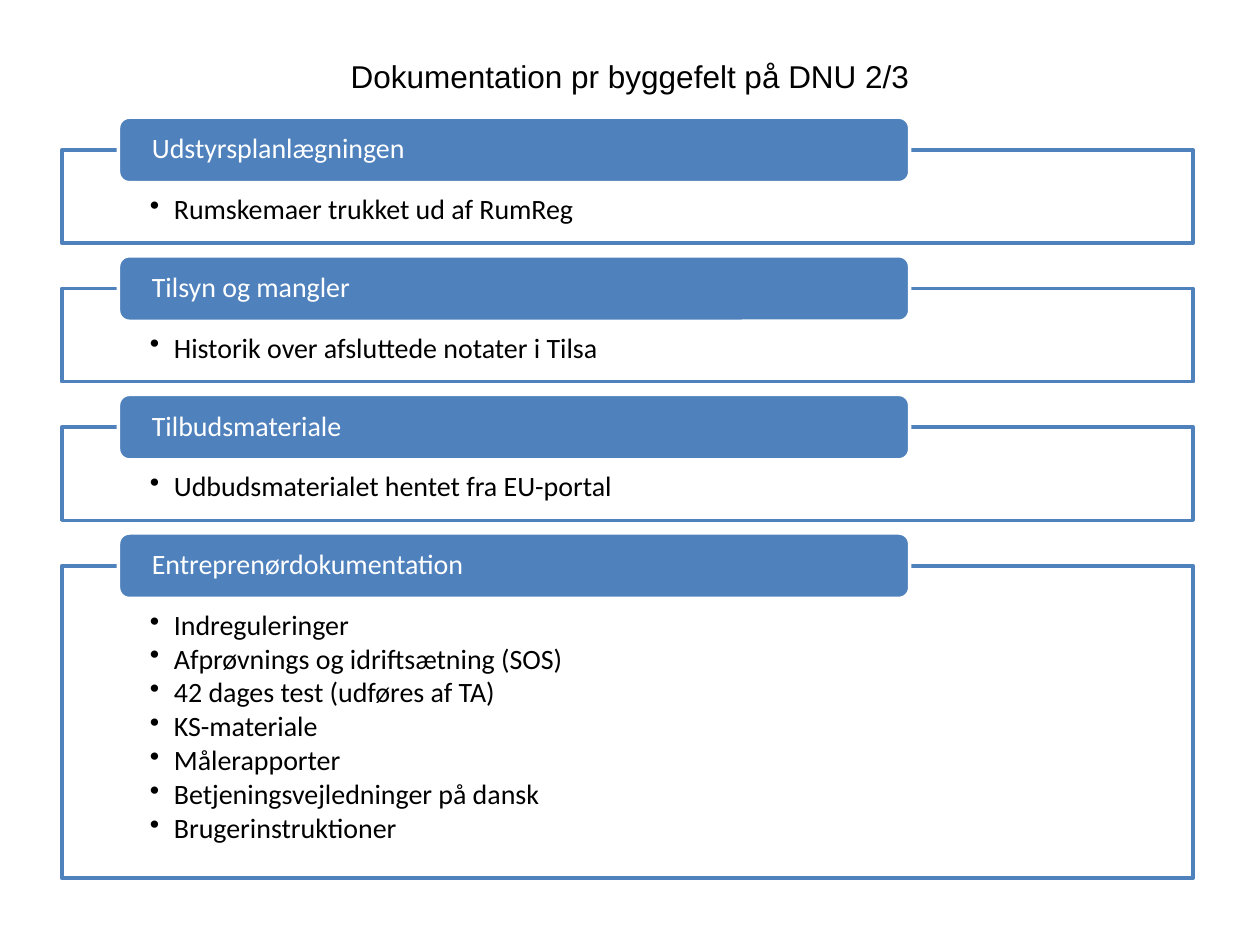
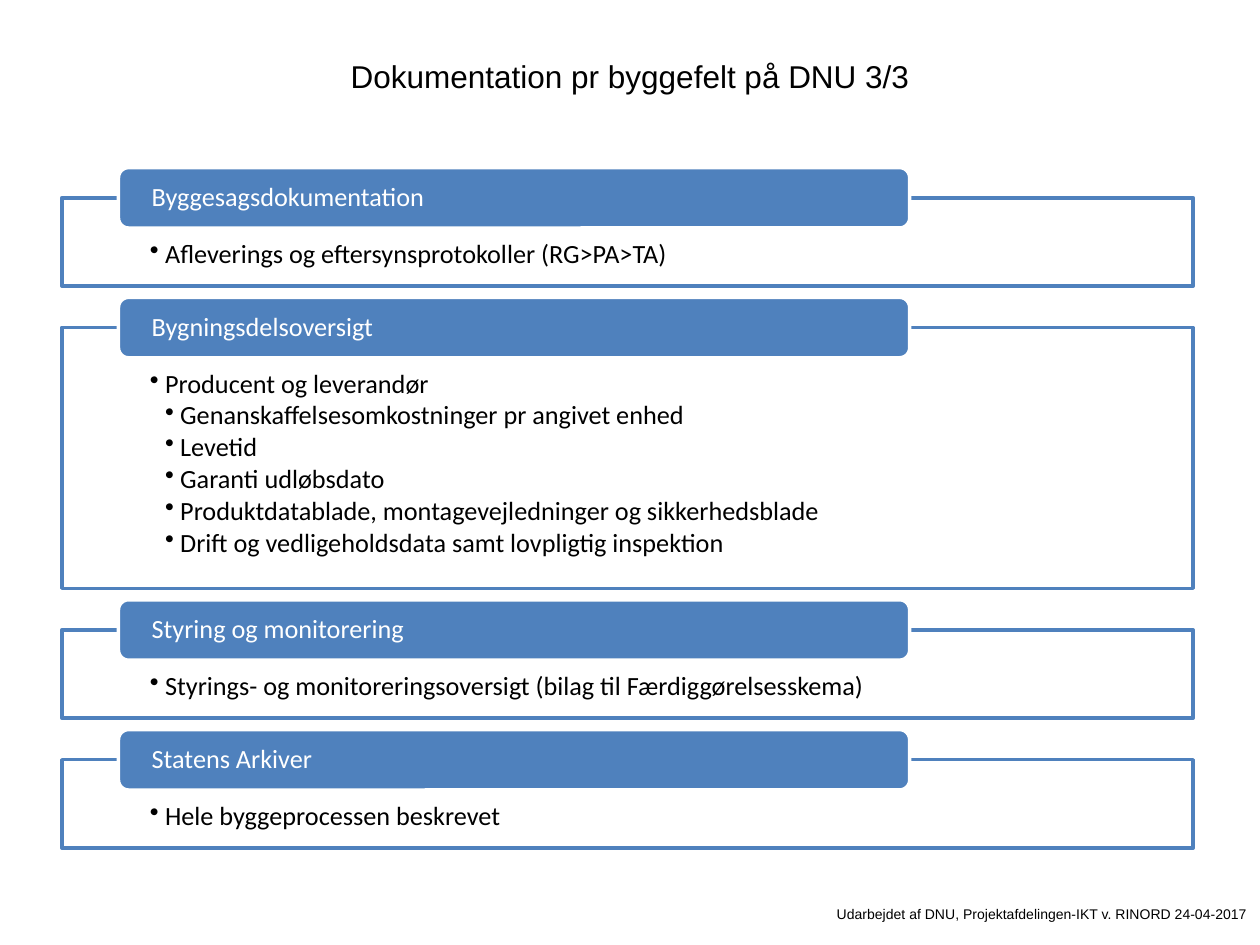
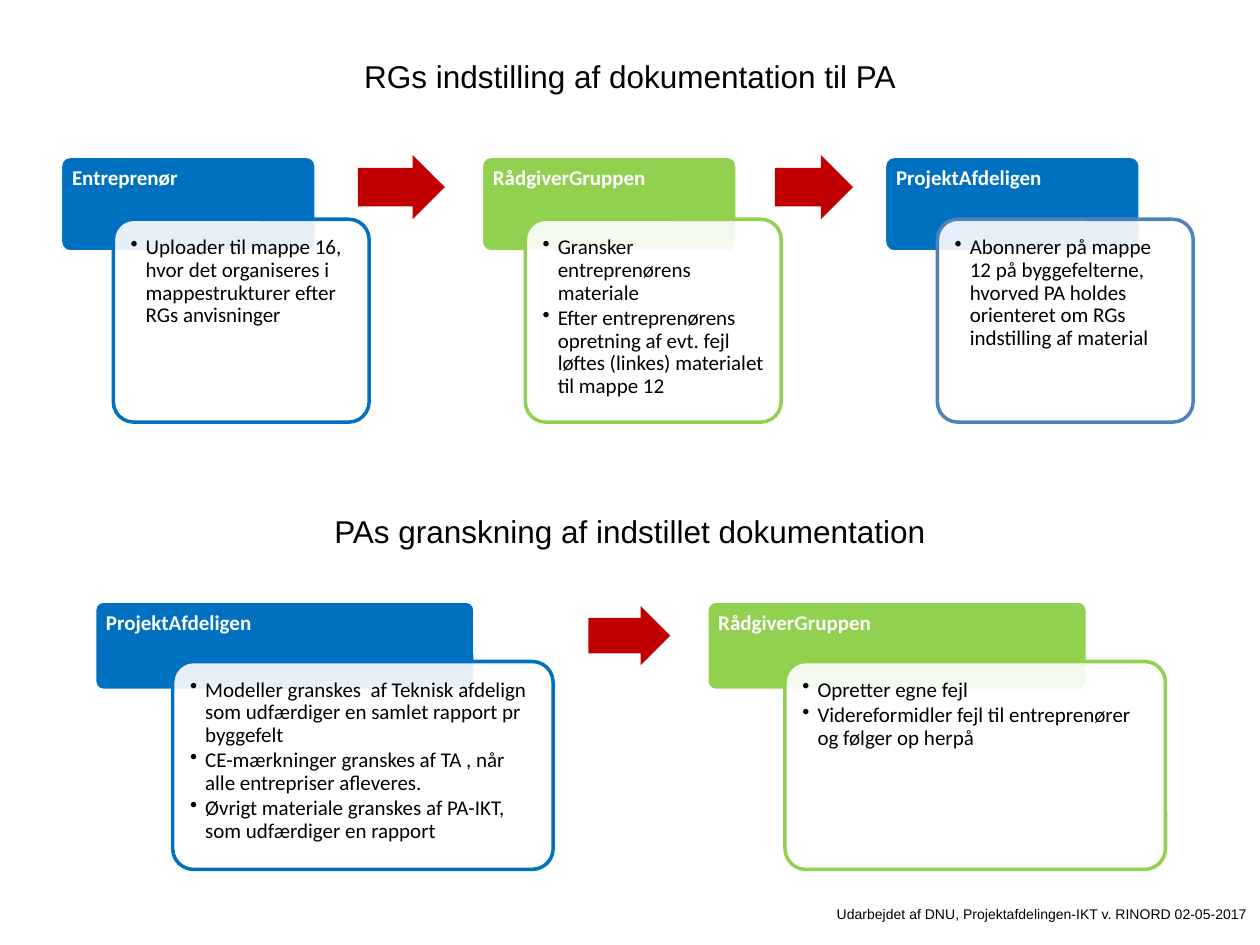
from dataclasses import dataclass

from lxml import etree
from pptx import Presentation
from pptx.dml.color import RGBColor
from pptx.enum.shapes import MSO_SHAPE
from pptx.enum.text import MSO_ANCHOR, MSO_AUTO_SIZE, PP_ALIGN
from pptx.oxml.ns import qn
from pptx.util import Pt

PX = 9144
RECT = MSO_SHAPE.RECTANGLE
ROUNDED = MSO_SHAPE.ROUNDED_RECTANGLE
ARROW = MSO_SHAPE.RIGHT_ARROW
TOP = MSO_ANCHOR.TOP
MIDDLE = MSO_ANCHOR.MIDDLE
LEFT = PP_ALIGN.LEFT
CENTER = PP_ALIGN.CENTER
RIGHT = PP_ALIGN.RIGHT
NO_FIT = MSO_AUTO_SIZE.NONE

WHITE = "FFFFFF"
BLACK = "000000"
STEEL = "4F81BD"
BLUE = "0070C0"
GREEN = "92D050"
RED = "C00000"
HEADING_FONT = "Arial"
BODY_FONT = "Calibri"


@dataclass(frozen=True)
class Box:
    left: int
    top: int
    width: int
    height: int

    def emu(self) -> tuple[int, ...]:
        return tuple(v * PX for v in (self.left, self.top, self.width, self.height))


@dataclass(frozen=True)
class Item:
    text: str
    level: int = 0


@dataclass(frozen=True)
class Section:
    heading: str
    frame_height: int
    items: tuple[Item, ...]


@dataclass(frozen=True)
class SectionStyle:
    top: int
    tab_height: int
    gap: int
    text_top: int
    indent: int
    size: int


@dataclass(frozen=True)
class Card:
    heading: str
    fill: str
    outline: str
    left: int
    body_left: int
    items: tuple[Item, ...]


@dataclass(frozen=True)
class CardRow:
    top: int
    width: int
    header_height: int
    body_top: int
    body_height: int
    cards: tuple[Card, ...]
    arrows: tuple[Box, ...]


TITLE_BOX = Box(50, -2, 900, 125)
SUBTITLE_BOX = Box(50, 359, 900, 125)
FOOTER_BOX = Box(390, 714, 610, 36)
FRAME_LEFT, FRAME_WIDTH = 49, 898
TAB_LEFT, TAB_WIDTH = 94, 628

HANDOVER_STYLE = SectionStyle(top=93, tab_height=52, gap=10, text_top=36, indent=19, size=16)
HANDOVER = (
    Section("Udstyrsplanlægningen", 74, (Item("Rumskemaer trukket ud af RumReg"),)),
    Section("Tilsyn og mangler", 74, (Item("Historik over afsluttede notater i Tilsa"),)),
    Section("Tilbudsmateriale", 74, (Item("Udbudsmaterialet hentet fra EU-portal"),)),
    Section("Entreprenørdokumentation", 248, (
        Item("Indreguleringer"),
        Item("Afprøvnings og idriftsætning (SOS)"),
        Item("42 dages test (udføres af TA)"),
        Item("KS-materiale"),
        Item("Målerapporter"),
        Item("Betjeningsvejledninger på dansk"),
        Item("Brugerinstruktioner"),
    )),
)

ARCHIVE_STYLE = SectionStyle(top=133, tab_height=48, gap=9, text_top=34, indent=12, size=15)
ARCHIVE = (
    Section("Byggesagsdokumentation", 70,
            (Item("Afleverings og eftersynsprotokoller (RG>PA>TA)"),)),
    Section("Bygningsdelsoversigt", 207, (
        Item("Producent og leverandør"),
        Item("Genanskaffelsesomkostninger pr angivet enhed", 1),
        Item("Levetid", 1),
        Item("Garanti udløbsdato", 1),
        Item("Produktdatablade, montagevejledninger og sikkerhedsblade", 1),
        Item("Drift og vedligeholdsdata samt lovpligtig inspektion", 1),
    )),
    Section("Styring og monitorering", 70,
            (Item("Styrings- og monitoreringsoversigt (bilag til Færdiggørelsesskema)"),)),
    Section("Statens Arkiver", 70, (Item("Hele byggeprocessen beskrevet"),)),
)

SUBMISSION = CardRow(
    top=124, width=203, header_height=76, body_top=174, body_height=161,
    cards=(
        Card("Entreprenør", BLUE, BLUE, 48, 90, (
            Item("Uploader til mappe 16, hvor det organiseres i "
                 "mappestrukturer efter RGs anvisninger"),
        )),
        Card("RådgiverGruppen", GREEN, GREEN, 382, 417, (
            Item("Gransker entreprenørens materiale"),
            Item("Efter entreprenørens opretning af evt. fejl løftes (linkes) "
                 "materialet til mappe 12"),
        )),
        Card("ProjektAfdeligen", BLUE, STEEL, 702, 744, (
            Item("Abonnerer på mappe 12 på byggefelterne, hvorved PA holdes "
                 "orienteret om RGs indstilling af material"),
        )),
    ),
    arrows=(Box(284, 123, 69, 51), Box(615, 123, 62, 51)),
)

REVIEW = CardRow(
    top=477, width=302, header_height=71, body_top=525, body_height=165,
    cards=(
        Card("ProjektAfdeligen", BLUE, BLUE, 75, 137, (
            Item("Modeller granskes  af Teknisk afdelign som udfærdiger en "
                 "samlet rapport pr byggefelt"),
            Item("CE-mærkninger granskes af TA , når alle entrepriser afleveres."),
            Item("Øvrigt materiale granskes af PA-IKT, som udfærdiger en rapport"),
        )),
        Card("RådgiverGruppen", GREEN, GREEN, 561, 623, (
            Item("Opretter egne fejl"),
            Item("Videreformidler fejl til entreprenører og følger op herpå"),
        )),
    ),
    arrows=(Box(467, 481, 65, 47),),
)


def color(value: str) -> RGBColor:
    return RGBColor.from_string(value)


def style_font(paragraph, font: str, size: int, ink: str, bold: bool = False) -> None:
    for run in paragraph.runs:
        run.font.name = font
        run.font.size = Pt(size)
        run.font.bold = bold
        run.font.color.rgb = color(ink)


def set_frame(frame, insets: tuple[int, int, int, int], anchor) -> None:
    frame.word_wrap = True
    frame.auto_size = NO_FIT
    frame.vertical_anchor = anchor
    left, top, right, bottom = (inset * PX for inset in insets)
    frame.margin_left, frame.margin_top = left, top
    frame.margin_right, frame.margin_bottom = right, bottom


def add_panel(slide, kind, box: Box, fill: str, outline: str | None = None,
              opacity: int = 100, adjustments: tuple[float, ...] = ()):
    panel = slide.shapes.add_shape(kind, *box.emu())
    panel.shadow.inherit = False
    for index, value in enumerate(adjustments):
        panel.adjustments[index] = value
    panel.fill.solid()
    panel.fill.fore_color.rgb = color(fill)
    if opacity < 100:
        tint = panel.fill._xPr.find(".//" + qn("a:srgbClr"))
        etree.SubElement(tint, qn("a:alpha"), val=str(opacity * 1000))
    if outline:
        panel.line.color.rgb = color(outline)
        panel.line.width = Pt(2)
    else:
        panel.line.fill.background()
    return panel


def write_label(panel, text: str, size: int, insets: tuple[int, int, int, int],
                anchor, bold: bool = False) -> None:
    frame = panel.text_frame
    set_frame(frame, insets, anchor)
    frame.text = text
    label = frame.paragraphs[0]
    label.alignment = LEFT
    label.line_spacing = 0.9
    style_font(label, BODY_FONT, size, WHITE, bold)


def write_list(panel, items: tuple[Item, ...], size: int, indent: int,
               insets: tuple[int, int, int, int]) -> None:
    frame = panel.text_frame
    set_frame(frame, insets, TOP)
    frame.text = "\n".join(item.text for item in items)
    for item, paragraph in zip(items, frame.paragraphs):
        properties = paragraph._p.get_or_add_pPr()
        properties.set("marL", str(indent * (item.level + 1) * PX))
        properties.set("indent", str(-indent * PX))
        etree.SubElement(properties, qn("a:buChar"), char="•")
        paragraph.level = item.level
        paragraph.alignment = LEFT
        paragraph.line_spacing = 0.9
        paragraph.space_after = Pt(size * 0.13)
        style_font(paragraph, BODY_FONT, size, BLACK)


def write_line(frame, text: str, size: int, alignment, anchor) -> None:
    set_frame(frame, (10, 5, 10, 5), anchor)
    frame.text = text
    frame.paragraphs[0].alignment = alignment
    style_font(frame.paragraphs[0], HEADING_FONT, size, BLACK)


def add_titled_slide(deck, title: str):
    slide = deck.slides.add_slide(deck.slide_layouts[5])
    heading = slide.shapes.title
    heading.left, heading.top, heading.width, heading.height = TITLE_BOX.emu()
    write_line(heading.text_frame, title, 18, CENTER, MIDDLE)
    return slide


def add_subtitle(slide, text: str) -> None:
    subtitle = slide.shapes.add_textbox(*SUBTITLE_BOX.emu())
    write_line(subtitle.text_frame, text, 18, CENTER, MIDDLE)


def add_footer(slide, date: str) -> None:
    footer = slide.shapes.add_textbox(*FOOTER_BOX.emu())
    credit = f"Udarbejdet af DNU, Projektafdelingen-IKT v. RINORD {date}"
    write_line(footer.text_frame, credit, 8, RIGHT, TOP)


def draw_sections(slide, sections: tuple[Section, ...], style: SectionStyle) -> None:
    tab_top = style.top
    for section in sections:
        frame_top = tab_top + style.tab_height // 2
        frame = add_panel(slide, RECT,
                          Box(FRAME_LEFT, frame_top, FRAME_WIDTH, section.frame_height),
                          WHITE, STEEL, opacity=90)
        write_list(frame, section.items, style.size, style.indent,
                   (70, style.text_top, 70, 12))
        tab = add_panel(slide, ROUNDED,
                        Box(TAB_LEFT, tab_top, TAB_WIDTH, style.tab_height), STEEL, WHITE)
        write_label(tab, section.heading, style.size, (24, 0, 24, 0), MIDDLE)
        tab_top = frame_top + section.frame_height + style.gap


def draw_cards(slide, row: CardRow) -> None:
    for card in row.cards:
        header = add_panel(slide, ROUNDED,
                           Box(card.left, row.top, row.width, row.header_height),
                           card.fill, WHITE, adjustments=(0.1,))
        write_label(header, card.heading, 12, (7, 7, 7, 5), TOP, bold=True)
        body = add_panel(slide, ROUNDED,
                         Box(card.body_left, row.body_top, row.width, row.body_height),
                         WHITE, card.outline, opacity=90, adjustments=(0.1,))
        write_list(body, card.items, 12, 12, (9, 9, 9, 9))
    for arrow in row.arrows:
        add_panel(slide, ARROW, arrow, RED, adjustments=(0.6, 0.5))


def main() -> None:
    deck = Presentation()
    deck.slide_width, deck.slide_height = 1000 * PX, 750 * PX

    handover = add_titled_slide(deck, "Dokumentation pr byggefelt på DNU 2/3")
    draw_sections(handover, HANDOVER, HANDOVER_STYLE)

    archive = add_titled_slide(deck, "Dokumentation pr byggefelt på DNU 3/3")
    draw_sections(archive, ARCHIVE, ARCHIVE_STYLE)
    add_footer(archive, "24-04-2017")

    workflow = add_titled_slide(deck, "RGs indstilling af dokumentation til PA")
    draw_cards(workflow, SUBMISSION)
    add_subtitle(workflow, "PAs granskning af indstillet dokumentation")
    draw_cards(workflow, REVIEW)
    add_footer(workflow, "02-05-2017")

    deck.save("out.pptx")


if __name__ == "__main__":
    main()
